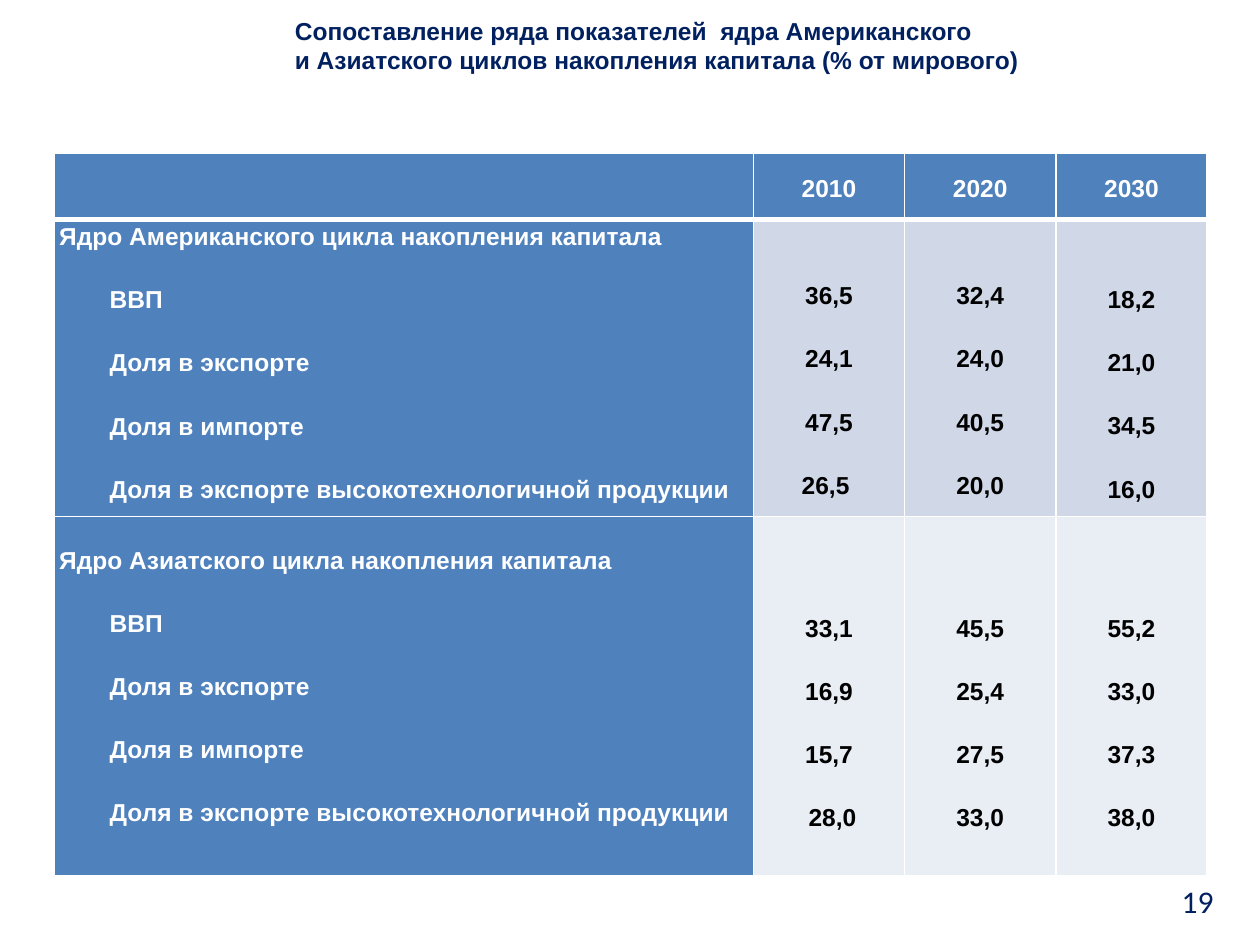
from dataclasses import dataclass

from pptx import Presentation
from pptx import util as u
from pptx.dml.color import RGBColor
from pptx.enum import text
from pptx.oxml import ns
from lxml import etree


# Colours and type sizes
@dataclass(frozen=True)
class Theme:
    navy: str = "002060"
    blue: str = "4F81BD"
    white: str = "FFFFFF"
    black: str = "000000"
    band: str = "D0D8E8"
    pale: str = "E9EDF4"
    font: str = "Arial"
    number_font: str = "Calibri"
    body: int = 14
    number: int = 18


INDICATORS = ["ВВП", "Доля в экспорте", "Доля в импорте",
              "Доля в экспорте высокотехнологичной продукции"]
YEARS = ["2010", "2020", "2030"]
# Name, fill, top inset of the labels, top inset of each year, values by year
CORES = [
    ("Ядро Американского цикла накопления капитала", "band", 0, [0.47, 0.47, 0.5],
     [["36,5", "24,1", "47,5", "26,5 "],
      ["32,4", "24,0", "40,5", "20,0"],
      ["18,2", "21,0", "34,5", "16,0"]]),
    ("Ядро Азиатского цикла накопления капитала", "pale", 0.21, [0.75] * 3,
     [["33,1", "16,9", "15,7", " 28,0"],
      ["45,5", "25,4", "27,5", "33,0"],
      ["55,2", "33,0", "37,3", "38,0"]]),
]


class Deck:
    def __init__(self, theme):
        self.theme = theme
        self.prs = Presentation()
        self.prs.slide_width, self.prs.slide_height = u.Inches(10), u.Inches(7.5)
        self.s = self.prs.slides.add_slide(self.prs.slide_layouts[5])

    def style(self, p, color, size=None, name=None, bold=True, align="LEFT"):
        p.alignment = getattr(text.PP_ALIGN, align)
        fmt = {"size": u.Pt(size or self.theme.body),
               "name": name or self.theme.font, "bold": bold}
        for r in p.runs:
            for key, value in fmt.items():
                setattr(r.font, key, value)
            r.font.color.rgb = RGBColor.from_string(color)

    def place(self, sp, left, top, width, height):
        box = {"left": left, "top": top, "width": width, "height": height}
        for key, value in box.items():
            setattr(sp, key, u.Inches(value))

    def title(self, words, *box):
        sp = self.s.shapes.title
        self.place(sp, *box)
        tf = sp.text_frame
        tf.text = words
        fmt = {"auto_size": text.MSO_AUTO_SIZE.NONE, "word_wrap": True,
               "vertical_anchor": text.MSO_ANCHOR.MIDDLE,
               "margin_bottom": u.Inches(0.17)}
        for key, value in fmt.items():
            setattr(tf, key, value)
        self.style(tf.paragraphs[0], self.theme.navy)

    def page_number(self, words, *box):
        sp = self.s.shapes.add_textbox(*map(u.Inches, box))
        tf = sp.text_frame
        tf.word_wrap = True
        tf.vertical_anchor = text.MSO_ANCHOR.MIDDLE
        tf.text = words
        self.style(tf.paragraphs[0], self.theme.navy, self.theme.number,
                   self.theme.number_font, False, "RIGHT")

    def table(self, left, top, cols, rows):
        box = map(u.Inches, (left, top, sum(cols), sum(rows)))
        tbl = self.s.shapes.add_table(len(rows), len(cols), *box).table
        for col, width in zip(tbl.columns, cols):
            col.width = u.Inches(width)
        for row, height in zip(tbl.rows, rows):
            row.height = u.Inches(height)
        return tbl

    def borders(self, cell, **widths):
        tc_pr = cell._tc.get_or_add_tcPr()
        for side in "LRTB":
            ln = etree.SubElement(tc_pr, ns.qn("a:ln" + side),
                                  w=str(u.Pt(widths.get(side, 1))))
            fill = etree.SubElement(ln, ns.qn("a:solidFill"))
            etree.SubElement(fill, ns.qn("a:srgbClr"), val=self.theme.white)

    def cell(self, cell, lines, fill, color, align="CENTER", top=0,
             anchor="TOP", indent=0, **widths):
        self.borders(cell, **widths)
        cell.fill.solid()
        cell.fill.fore_color.rgb = RGBColor.from_string(fill)
        fmt = {"margin_left": u.Inches(0.04), "margin_right": u.Inches(0.04),
               "margin_top": u.Inches(top), "margin_bottom": 0,
               "vertical_anchor": getattr(text.MSO_ANCHOR, anchor)}
        for key, value in fmt.items():
            setattr(cell, key, value)
        tf = cell.text_frame
        for i, words in enumerate(lines):
            p = tf.add_paragraph() if i else tf.paragraphs[0]
            p.text = words
            p.line_spacing = 1.15
            if i:
                p.space_before = u.Pt(18)
                if indent:
                    p._p.get_or_add_pPr().set("marL", str(u.Inches(indent)))
            self.style(p, color, align=align)


def main():
    t = Theme()
    deck = Deck(t)
    deck.title("Сопоставление ряда показателей  ядра Американского \v"
               "и Азиатского циклов накопления капитала (% от мирового)",
               2.24, 0.08, 6.61, 0.68)

    # Header row
    tbl = deck.table(0.43, 1.22, [5.55, 1.2, 1.2, 1.2], [0.52, 2.36, 2.85])
    for c, year in enumerate([None] + YEARS):
        deck.cell(tbl.cell(0, c), [year] if year else [], t.blue, t.white,
                  anchor="MIDDLE", B=3)

    # One row for each core: labels, then values by year
    for r, (name, fill, label_top, tops, values) in enumerate(CORES, 1):
        edge = {"T": 3 if r == 1 else 1}
        deck.cell(tbl.cell(r, 0), [name] + INDICATORS, t.blue, t.white,
                  "LEFT", label_top, indent=0.4, **edge)
        for c, (top, column) in enumerate(zip(tops, values), 1):
            deck.cell(tbl.cell(r, c), column, getattr(t, fill), t.black,
                      top=top, **edge)

    deck.page_number("19", 7.17, 6.95, 2.56, 0.4)
    deck.prs.save("out.pptx")


if __name__ == "__main__":
    main()
